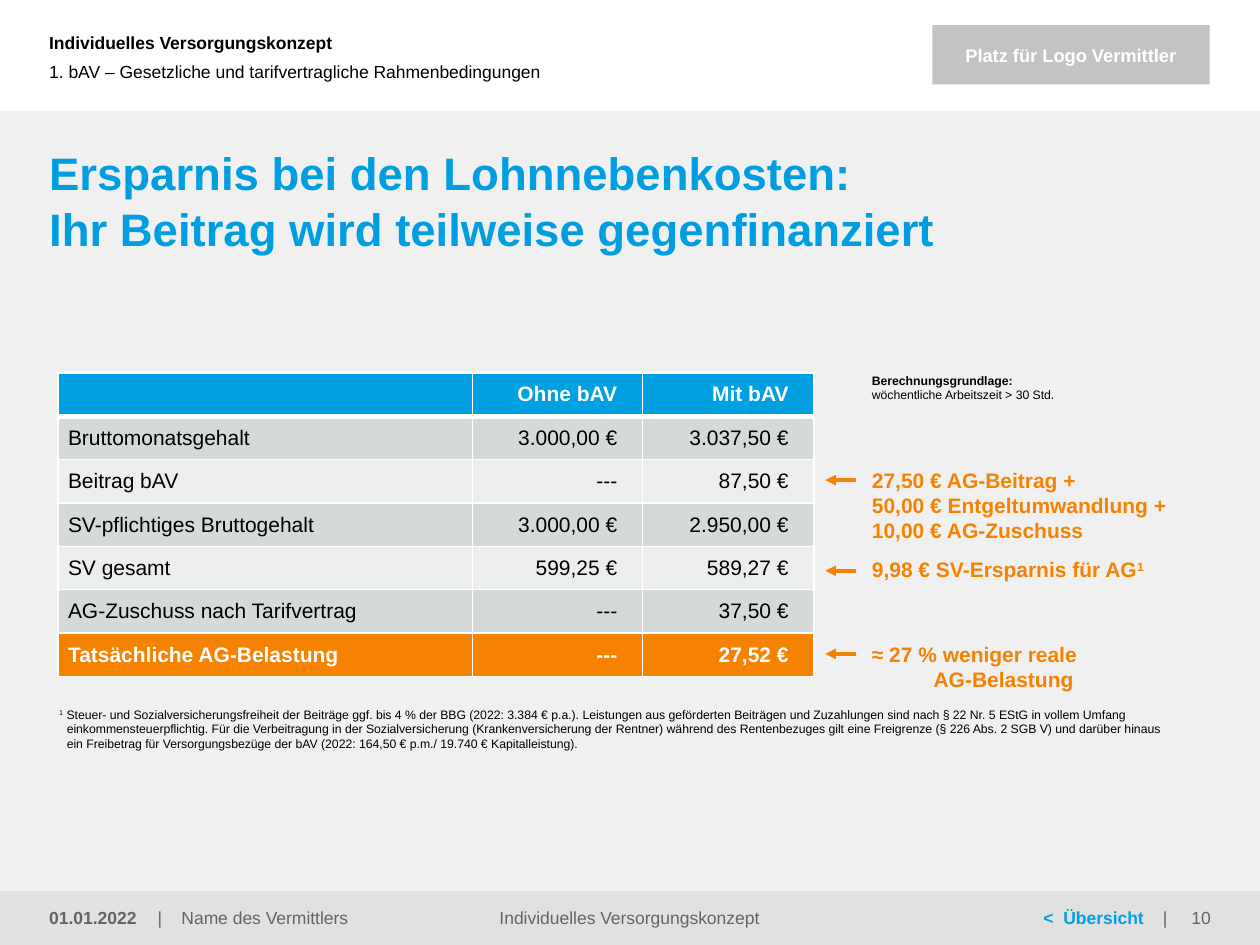
import pptx
import pptx.dml.color
import pptx.enum.shapes
import pptx.enum.text
import pptx.oxml
import pptx.oxml.ns
import pptx.util
from lxml import etree

RGBColor = pptx.dml.color.RGBColor
Inches = pptx.util.Inches
Pt = pptx.util.Pt
Align = pptx.enum.text.PP_ALIGN
Anchor = pptx.enum.text.MSO_ANCHOR
AutoSize = pptx.enum.text.MSO_AUTO_SIZE
qn = pptx.oxml.ns.qn

BLACK = RGBColor(0x00, 0x00, 0x00)
WHITE = RGBColor(0xFF, 0xFF, 0xFF)
PALE_GREY = RGBColor(0xF0, 0xF0, 0xF0)
FOOTER_GREY = RGBColor(0xE1, 0xE1, 0xE1)
LOGO_GREY = RGBColor(0xC3, 0xC3, 0xC3)
TEXT_GREY = RGBColor(0x64, 0x64, 0x64)
TITLE_BLUE = RGBColor(0x00, 0x9E, 0xE0)
BLUE = RGBColor(0x00, 0xA0, 0xE1)
ORANGE = RGBColor(0xF5, 0x82, 0x00)
ROW_DARK = RGBColor(0xD4, 0xD9, 0xDA)
ROW_LIGHT = RGBColor(0xEB, 0xED, 0xEE)

FOOTER_TOP, FOOTER_HEIGHT = 7.07, 0.43
NOTE_LEFT = 6.92


class SlideBuilder:
    font = "Arial"

    def __init__(self, slide):
        self.slide = slide
        self.shapes = slide.shapes

    def add_text(self, paragraph, text, size, color, bold=False, raised=False):
        """Add text as runs, with a line break at each newline."""
        for number, line in enumerate(text.split("\n")):
            if number:
                paragraph.add_line_break()
            run = paragraph.add_run()
            run.text = line
            run.font.name = self.font
            run.font.size = Pt(size)
            run.font.bold = bold
            run.font.color.rgb = color
            if raised:
                run._r.get_or_add_rPr().set("baseline", "30000")

    def frame(self, shape, anchor=Anchor.TOP, insets=(0, 0, 0, 0),
              auto_size=AutoSize.NONE, wrap=True):
        """Set up the text frame and return its first paragraph."""
        frame = shape.text_frame
        frame.word_wrap = wrap
        frame.auto_size = auto_size
        frame.vertical_anchor = anchor
        (frame.margin_left, frame.margin_top,
         frame.margin_right, frame.margin_bottom) = map(Inches, insets)
        return frame.paragraphs[0]

    def rectangle(self, box, color):
        shape = self.shapes.add_shape(
            pptx.enum.shapes.MSO_SHAPE.RECTANGLE, *map(Inches, box))
        shape.shadow.inherit = False
        shape.fill.solid()
        shape.fill.fore_color.rgb = color
        shape.line.fill.background()
        return shape

    def placeholder(self, shape, box, **frame_style):
        """Move a placeholder to its box, in front of the shapes so far."""
        self.shapes._spTree.append(shape._element)
        shape.left, shape.top, shape.width, shape.height = map(Inches, box)
        paragraph = self.frame(shape, **frame_style)
        paragraph.alignment = Align.LEFT
        paragraph.space_before = Pt(0)
        return paragraph

    def text(self, box, align=Align.LEFT, **frame_style):
        shape = self.shapes.add_textbox(*map(Inches, box))
        paragraph = self.frame(shape, **frame_style)
        paragraph.alignment = align
        return paragraph

    def footer(self, left, width, insets=(0, 0, 0, 0), align=Align.LEFT):
        return self.text((left, FOOTER_TOP, width, FOOTER_HEIGHT), align,
                         anchor=Anchor.MIDDLE, insets=insets)

    def note(self, top, width, height, wrap=True):
        return self.text((NOTE_LEFT, top, width, height), wrap=wrap,
                         auto_size=AutoSize.SHAPE_TO_FIT_TEXT)

    def tabs(self, paragraph, *stops):
        tab_list = etree.SubElement(paragraph._p.get_or_add_pPr(), qn("a:tabLst"))
        for stop in stops:
            etree.SubElement(tab_list, qn("a:tab"), pos=str(Inches(stop)), algn="l")

    def indent(self, paragraph, margin, first_line):
        properties = paragraph._p.get_or_add_pPr()
        properties.set("marL", str(Inches(margin)))
        properties.set("indent", str(Inches(first_line)))
        return properties

    def arrow(self, start, end, y):
        line = self.shapes.add_connector(
            pptx.enum.shapes.MSO_CONNECTOR.STRAIGHT,
            Inches(start), Inches(y), Inches(end), Inches(y))
        line.line.color.rgb = ORANGE
        line.line.width = Pt(2)
        etree.SubElement(line.line._get_or_add_ln(), qn("a:tailEnd"), type="triangle")
        etree.SubElement(line._element.spPr, qn("a:effectLst"))

    def borders(self, cell, **widths):
        properties = cell._tc.get_or_add_tcPr()
        for side in "LRTB":
            edge = etree.SubElement(properties, qn("a:ln" + side),
                                    w=str(Pt(widths.get(side, 1))))
            fill = etree.SubElement(edge, qn("a:solidFill"))
            etree.SubElement(fill, qn("a:srgbClr"), val=str(WHITE))

    def table(self, box, column_widths, rows):
        left, top, width, height = map(Inches, box)
        table = self.shapes.add_table(
            len(rows), len(column_widths), left, top, width, height).table
        for column, column_width in zip(table.columns, column_widths):
            column.width = Inches(column_width)
        for y, values in enumerate(rows):
            table.rows[y].height = height // len(rows)
            strong = y in (0, len(rows) - 1)
            if strong:
                fill = ORANGE if y else BLUE
            else:
                fill = ROW_DARK if y % 2 else ROW_LIGHT
            edges = {0: {"B": 3}, 1: {"T": 3}}.get(y, {})
            for x, value in enumerate(values):
                cell = table.cell(y, x)
                self.borders(cell, **edges)
                cell.fill.solid()
                cell.fill.fore_color.rgb = fill
                cell.vertical_anchor = Anchor.MIDDLE
                cell.margin_left = Inches(0.08)
                cell.margin_right = Inches(0.2 if x else 0.08)
                cell.margin_top = cell.margin_bottom = Inches(0.04)
                paragraph = cell.text_frame.paragraphs[0]
                paragraph.alignment = Align.RIGHT if x else Align.LEFT
                if value:
                    self.add_text(paragraph, value, 12, WHITE if strong else BLACK, strong)
                else:
                    etree.SubElement(paragraph._p, qn("a:endParaRPr"), sz="1200")


def main():
    deck = pptx.Presentation()
    deck.slide_width, deck.slide_height = Inches(10), Inches(7.5)
    page = SlideBuilder(deck.slides.add_slide(deck.slide_layouts[1]))
    title, chapter = page.shapes.placeholders

    page.rectangle((0, 0.88, 10, 6.62), PALE_GREY)
    page.rectangle((0, FOOTER_TOP, 10, FOOTER_HEIGHT), FOOTER_GREY)

    agent = page.footer(1.25, 2.42)
    page.tabs(agent, 0.19)
    page.add_text(agent, "|\tName des Vermittlers", 10, TEXT_GREY)
    overview = page.footer(6.88, 2.42, insets=(1.4, 0, 0, 0))
    page.tabs(overview, 0.16, 0.95)
    page.add_text(overview, "<\tÜbersicht", 10, BLUE, bold=True)
    page.add_text(overview, "\t|", 10, TEXT_GREY)

    concept = page.text((0, 0, 6.98, 0.67), anchor=Anchor.MIDDLE,
                        insets=(0.39, 0.05, 0.1, 0.05))
    page.add_text(concept, "Individuelles Versorgungskonzept", 10, BLACK, bold=True)
    logo_space = page.frame(page.rectangle((7.4, 0.2, 2.2, 0.47), LOGO_GREY),
                            anchor=Anchor.MIDDLE)
    logo_space.alignment = Align.CENTER
    page.add_text(logo_space, "Platz für Logo Vermittler", 10.5, WHITE, bold=True)

    headline = page.placeholder(title, (0.39, 1.14, 9.22, 0.55))
    headline.line_spacing = 1.03
    page.add_text(headline, "Ersparnis bei den Lohnnebenkosten:\n"
                  "Ihr Beitrag wird teilweise gegenfinanziert", 26, TITLE_BLUE, bold=True)
    section = page.placeholder(chapter, (0, 0.25, 7.15, 0.63),
                               anchor=Anchor.MIDDLE, insets=(0.39, 0, 0, 0))
    etree.SubElement(page.indent(section, 0, 0), qn("a:buNone"))
    page.add_text(section, "1. bAV – Gesetzliche und tarifvertragliche Rahmenbedingungen",
                  10, BLACK)

    date = page.footer(0, 1.22, insets=(0.39, 0.05, 0.1, 0.05))
    page.add_text(date, "01.01.2022", 10, TEXT_GREY, bold=True)
    footer_concept = page.footer(2.93, 4.13, align=Align.CENTER)
    page.add_text(footer_concept, "Individuelles Versorgungskonzept", 10, TEXT_GREY)
    page_number = page.footer(9.06, 0.94, (0.1, 0.05, 0.39, 0.05), Align.RIGHT)
    page.add_text(page_number, "10", 10, TEXT_GREY)

    page.table((0.46, 2.96, 6, 2.41), (3.29, 1.35, 1.36), [
        ("", "Ohne bAV", "Mit bAV"),
        ("Bruttomonatsgehalt", "3.000,00 €", "3.037,50 €"),
        ("Beitrag bAV", "---", "87,50 €"),
        ("SV-pflichtiges Bruttogehalt", "3.000,00 €", "2.950,00 €"),
        ("SV gesamt", "599,25 €", "589,27 €"),
        ("AG-Zuschuss nach Tarifvertrag", "---", "37,50 €"),
        ("Tatsächliche AG-Belastung", "---", "27,52 €"),
    ])

    saving = page.note(4.42, 2.33, 0.2)
    page.add_text(saving, "9,98 € SV-Ersparnis für AG", 12, ORANGE, bold=True)
    page.add_text(saving, "1", 12, ORANGE, bold=True, raised=True)
    contribution = page.note(3.71, 2.41, 0.61, wrap=False)
    page.add_text(contribution, "27,50 € AG-Beitrag +\n50,00 € Entgeltumwandlung +\n"
                  "10,00 € AG-Zuschuss", 12, ORANGE, bold=True)
    burden = page.note(5.09, 2.33, 0.4)
    page.tabs(burden, 0.49)
    page.add_text(burden, "≈ 27 % weniger reale\n\tAG-Belastung", 12, ORANGE, bold=True)

    footnote = page.text((0.47, 5.54, 8.81, 0.42), anchor=Anchor.BOTTOM)
    page.indent(footnote, 0.06, -0.06)
    page.add_text(footnote, "1", 7, BLACK, raised=True)
    page.add_text(
        footnote,
        " Steuer- und Sozialversicherungsfreiheit der Beiträge ggf. bis 4 % der BBG "
        "(2022: 3.384 € p.a.). Leistungen aus geförderten Beiträgen und Zuzahlungen sind "
        "nach § 22 Nr. 5 EStG in vollem Umfang einkommensteuerpflichtig. Für die "
        "Verbeitragung in der Sozialversicherung (Krankenversicherung der Rentner) während "
        "des Rentenbezuges gilt eine Freigrenze (§ 226 Abs. 2 SGB V) und darüber hinaus ein "
        "Freibetrag für Versorgungsbezüge der bAV (2022: 164,50 € p.m./ 19.740 € "
        "Kapitalleistung).", 7, BLACK)

    basis = page.note(2.96, 2.36, 0.24)
    page.add_text(basis, "Berechnungsgrundlage:", 7, BLACK, bold=True)
    working_time = page.shapes[-1].text_frame.add_paragraph()
    page.add_text(working_time, "wöchentliche Arbeitszeit > 30 Std.", 7, BLACK)

    for y in (3.81, 4.53, 5.19):
        page.arrow(6.79, 6.55, y)

    deck.save("out.pptx")


if __name__ == "__main__":
    main()
